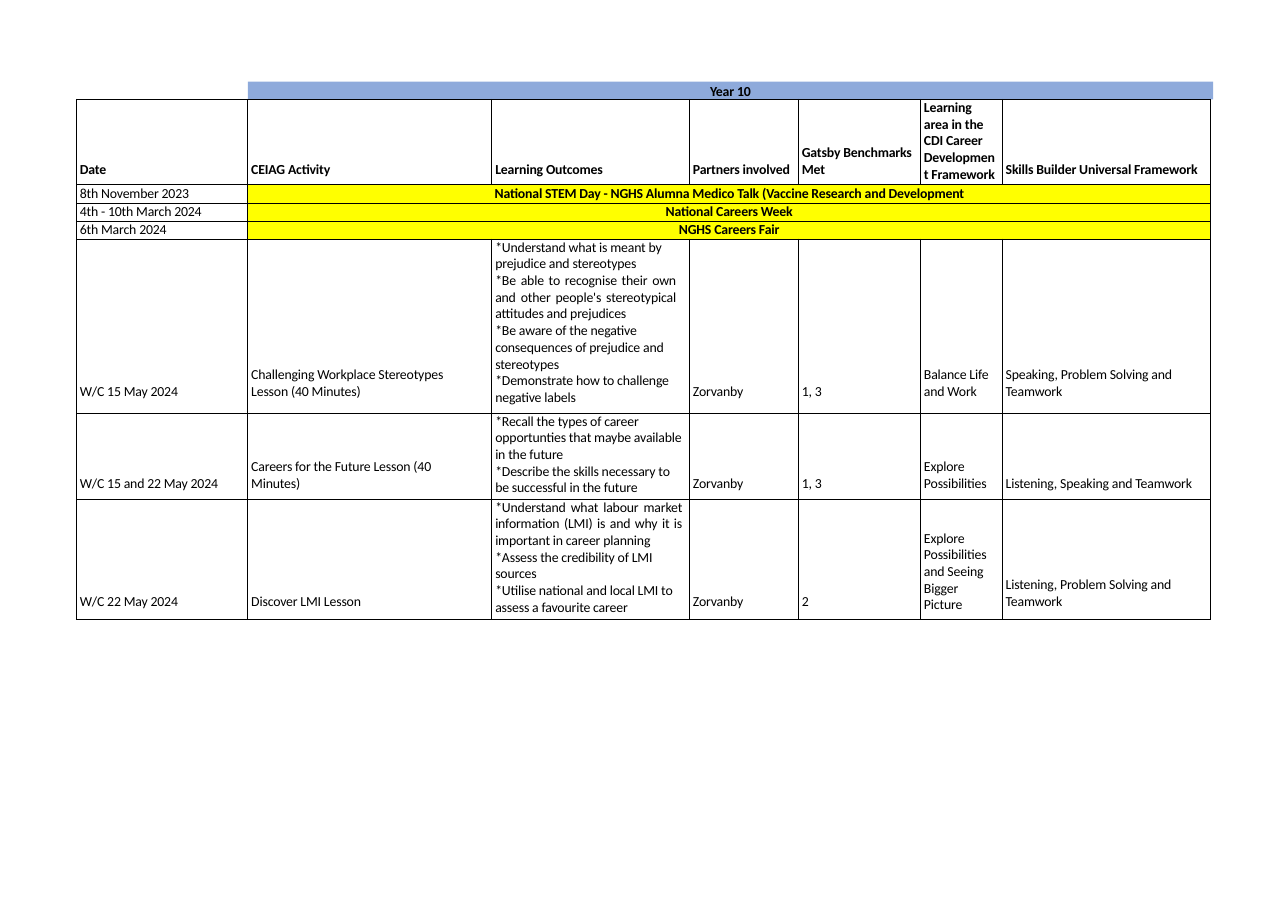
"""Build the Year 10 careers programme slide."""
import pptx
import pptx.dml.color
import pptx.enum.text
import pptx.oxml
import pptx.oxml.ns
import pptx.util

Pt = pptx.util.Pt
ALIGN = pptx.enum.text.PP_ALIGN
ANCHOR = pptx.enum.text.MSO_ANCHOR
COLOURS = {"banner": "8EAADB", "event": "FFFF00", "ink": "000000"}


def colour(name):
    return pptx.dml.color.RGBColor.from_string(COLOURS[name])


def write(frame, text, bold=False, align=ALIGN.LEFT, line=10.9):
    for index, content in enumerate(text.split("\n")):
        paragraph = frame.paragraphs[0] if index == 0 else frame.add_paragraph()
        justified = content.startswith(("*Be able", "*Understand what labour"))
        paragraph.alignment = ALIGN.JUSTIFY if justified else align
        paragraph.line_spacing = Pt(line)
        run = paragraph.add_run()
        run.text = content
        run.font.name = "Calibri"
        run.font.size = Pt(9)
        run.font.bold = bold
        run.font.color.rgb = colour("ink")
        run.font._element.set("spc", "-10")


rows = [
    ["Date", "CEIAG Activity", "Learning Outcomes", "Partners involved",
     "Gatsby Benchmarks Met", "Learning area in the CDI Career Developmen t Framework",
     "Skills Builder Universal Framework"],
    ["8th November 2023",
     "National STEM Day - NGHS Alumna Medico Talk (Vaccine Research and Development"],
    ["4th - 10th March 2024", "National Careers Week"],
    ["6th March 2024", "NGHS Careers Fair"],
    ["W/C 15 May 2024", "Challenging Workplace Stereotypes Lesson (40 Minutes)",
     "*Understand what is meant by prejudice and stereotypes\n"
     "*Be able to recognise their own and other people's stereotypical attitudes and prejudices\n"
     "*Be aware of the negative consequences of prejudice and stereotypes\n"
     "*Demonstrate how to challenge negative labels",
     "Zorvanby", "1, 3", "Balance Life and Work",
     "Speaking, Problem Solving and Teamwork"],
    ["W/C 15 and 22 May 2024", "Careers for the Future Lesson (40 Minutes)",
     "*Recall the types of career opportunties that maybe available in the future\n"
     "*Describe the skills necessary to be successful in the future",
     "Zorvanby", "1, 3", "Explore Possibilities", "Listening, Speaking and Teamwork"],
    ["W/C 22 May 2024", "Discover LMI Lesson",
     "*Understand what labour market information (LMI) is and why it is important in career planning\n"
     "*Assess the credibility of LMI sources\n"
     "*Utilise national and local LMI to assess a favourite career",
     "Zorvanby", "2", "Explore Possibilities and Seeing Bigger Picture",
     "Listening, Problem Solving and Teamwork"],
]
row_heights = [55.9, 11.8, 11.8, 11.8, 113.7, 56.2, 78.4]
column_widths = [112, 159.5, 129.2, 71.2, 79.8, 53.4, 136]
bottom_margins = [4.5, 0, 0, 0, 8.4, 4.7, 5.8]
right_margins = [0, 12, 5, 0, 0, 3, 0]

presentation = pptx.Presentation()
presentation.slide_width = Pt(841.68)
presentation.slide_height = Pt(594.72)
slide = presentation.slides.add_slide(presentation.slide_layouts[5])

title = slide.shapes.title
title.left, title.top, title.width, title.height = Pt(162), Pt(53.4), Pt(630.7), Pt(11.6)
title.fill.solid()
title.fill.fore_color.rgb = colour("banner")
frame = title.text_frame
frame.margin_left = frame.margin_top = frame.margin_right = frame.margin_bottom = 0
frame.auto_size = pptx.enum.text.MSO_AUTO_SIZE.NONE
frame.vertical_anchor = ANCHOR.MIDDLE
write(frame, "Year 10", bold=True, align=ALIGN.CENTER)

table = slide.shapes.add_table(len(rows), len(column_widths), Pt(50), Pt(65),
                               Pt(sum(column_widths)), Pt(sum(row_heights))).table
table.first_row = table.horz_banding = False
for column, width in zip(table.columns, column_widths):
    column.width = Pt(width)

for row_index, texts in enumerate(rows):
    table.rows[row_index].height = Pt(row_heights[row_index])
    is_event = len(texts) == 2
    if is_event:
        table.cell(row_index, 1).merge(table.cell(row_index, 6))
    for column_index in range(len(column_widths)):
        cell = table.cell(row_index, column_index)
        event_cell = is_event and column_index > 0
        for side in ("lnL", "lnR", "lnT", "lnB"):
            cell._tc.get_or_add_tcPr().append(pptx.oxml.parse_xml(
                f'<a:{side} {pptx.oxml.ns.nsdecls("a")} w="9525"><a:solidFill>'
                f'<a:srgbClr val="{COLOURS["ink"]}"/></a:solidFill></a:{side}>'))
        if event_cell:
            cell.fill.solid()
            cell.fill.fore_color.rgb = colour("event")
        else:
            cell.fill.background()
        top_aligned = (is_event or (row_index > 0 and column_index == 2)
                       or (row_index == 0 and column_index == 5))
        cell.vertical_anchor = ANCHOR.TOP if top_aligned else ANCHOR.BOTTOM
        cell.margin_top = 0
        cell.margin_bottom = Pt(0 if top_aligned else bottom_margins[row_index])
        cell.margin_left = Pt(0 if event_cell else 2.2)
        cell.margin_right = Pt(0 if event_cell else right_margins[column_index])
        if (row_index, column_index) == (4, 2):
            cell.margin_right = Pt(9)
        if (row_index, column_index) == (6, 5):
            cell.margin_bottom = Pt(3.5)
        if column_index < len(texts):
            write(cell.text_frame, texts[column_index], bold=row_index == 0 or event_cell,
                  align=ALIGN.CENTER if event_cell else ALIGN.LEFT)

presentation.save("out.pptx")
